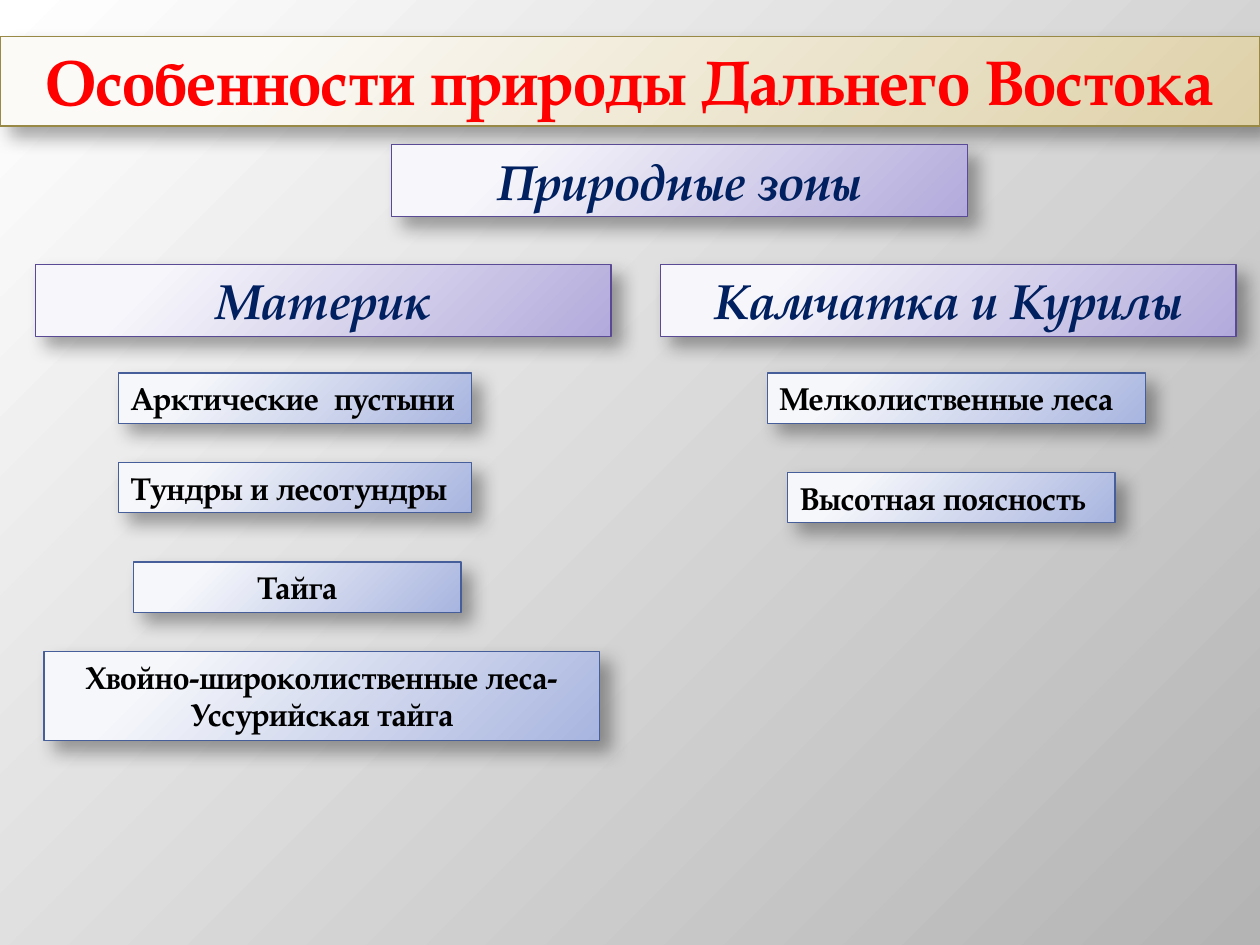
from lxml import etree
from pptx import Presentation
from pptx import util as u
from pptx.dml.color import RGBColor
from pptx.enum import shapes, text
from pptx.oxml import parse_xml
from pptx.oxml.ns import nsdecls, qn

WHITE = RGBColor(0xFF, 0xFF, 0xFF)
GREY = RGBColor(0xB4, 0xB4, 0xB4)
CREAM = RGBColor(0xFB, 0xFA, 0xF6)
SAND = RGBColor(0xDE, 0xD1, 0xA8)
OLIVE = RGBColor(0x99, 0x89, 0x46)
PALE_LILAC = RGBColor(0xF7, 0xF6, 0xFB)
LILAC = RGBColor(0xB2, 0xAA, 0xDB)
PURPLE = RGBColor(0x5A, 0x4A, 0x96)
PALE_BLUE = RGBColor(0xF6, 0xF7, 0xFB)
BLUE = RGBColor(0xA8, 0xB5, 0xDF)
STEEL = RGBColor(0x46, 0x5F, 0x9A)
RED = RGBColor(0xFF, 0x00, 0x00)
NAVY = RGBColor(0x00, 0x20, 0x60)
BLACK = RGBColor(0x00, 0x00, 0x00)

FONT = "TeX Gyre Pagella"
LEFT, CENTER = text.PP_ALIGN.LEFT, text.PP_ALIGN.CENTER

TITLE = {"stops": (CREAM, SAND), "line": OLIVE, "color": RED,
         "font": {"size": u.Pt(36), "bold": True}}
HEADING = {"stops": (PALE_LILAC, LILAC), "line": PURPLE, "color": NAVY,
           "font": {"size": u.Pt(28), "bold": True, "italic": True}}
ZONE = {"stops": (PALE_BLUE, BLUE), "line": STEEL, "color": BLACK,
        "font": {"size": u.Pt(18), "bold": True}}

MAINLAND = [
    ("Арктические  пустыни", (0.66, 0.86, 2.8, 0.4), LEFT),
    ("Тундры и лесотундры", (0.66, 1.57, 2.8, 0.4), LEFT),
    ("Тайга", (0.78, 2.36, 2.6, 0.4), CENTER),
    ("Хвойно-широколиственные леса-Уссурийская тайга",
     (0.07, 3.07, 4.41, 0.71), CENTER),
]
ISLANDS = [
    ("Мелколиственные леса", (0.85, 0.86, 3, 0.4), LEFT),
    ("Высотная поясность", (1.01, 1.65, 2.6, 0.4), LEFT),
]


def radial_fill(fill, colors, start, near, far):
    fill.gradient()
    for stop, color, position in zip(fill.gradient_stops, colors, (start, 1)):
        stop.color.rgb = color
        stop.position = position
    grad = fill.gradient_stops[0]._gs.getparent().getparent()
    grad.remove(grad.find(qn("a:lin")))
    path = etree.SubElement(grad, qn("a:path"), {"path": "circle"})
    rect = {"l": near, "t": near, "r": far, "b": far}
    etree.SubElement(path, qn("a:fillToRect"),
                     {side: str(value * 1000) for side, value in rect.items()})


def add_shadow(sp):
    sp.shadow.inherit = False
    effects = sp._element.spPr.find(qn("a:effectLst"))
    effects.append(parse_xml(
        f'<a:outerShdw {nsdecls("a")} blurRad="130000" dist="101600" '
        'dir="2700000" algn="tl" rotWithShape="0"><a:srgbClr val="000000">'
        '<a:alpha val="35000"/></a:srgbClr></a:outerShdw>'))


def add_panel(s, box, wording, style, align=CENTER):
    sp = s.shapes.add_shape(shapes.MSO_SHAPE.RECTANGLE, *map(u.Inches, box))
    radial_fill(sp.fill, style["stops"], 0.2, -15, 115)
    sp.line.color.rgb = style["line"]
    sp.line.width = u.Pt(0.75)
    add_shadow(sp)
    tf = sp.text_frame
    frame = {"word_wrap": True, "vertical_anchor": text.MSO_ANCHOR.TOP,
             "auto_size": text.MSO_AUTO_SIZE.SHAPE_TO_FIT_TEXT}
    for name, value in frame.items():
        setattr(tf, name, value)
    p = tf.paragraphs[0]
    p.alignment = align
    r = p.add_run()
    r.text = wording
    for name, value in {"name": FONT, **style["font"]}.items():
        setattr(r.font, name, value)
    r.font.color.rgb = style["color"]


def add_region(s, box, heading, zones):
    left, top, width, height = box
    add_panel(s, box, heading, HEADING)
    for wording, (dx, dy, w, h), align in zones:
        add_panel(s, (left + dx, top + dy, w, h), wording, ZONE, align)


def main():
    prs = Presentation()
    prs.slide_width, prs.slide_height = u.Inches(10), u.Inches(7.5)
    s = prs.slides.add_slide(prs.slide_layouts[6])
    radial_fill(s.background.fill, (WHITE, GREY), 0, 0, 100)
    add_panel(s, (0, 0.29, 10, 0.71), "Особенности природы Дальнего Востока", TITLE)
    add_panel(s, (3.11, 1.15, 4.57, 0.57), "Природные зоны", HEADING)
    add_region(s, (0.28, 2.1, 4.57, 0.57), "Материк", MAINLAND)
    add_region(s, (5.24, 2.1, 4.57, 0.57), "Камчатка и Курилы", ISLANDS)
    prs.save("out.pptx")


if __name__ == "__main__":
    main()
